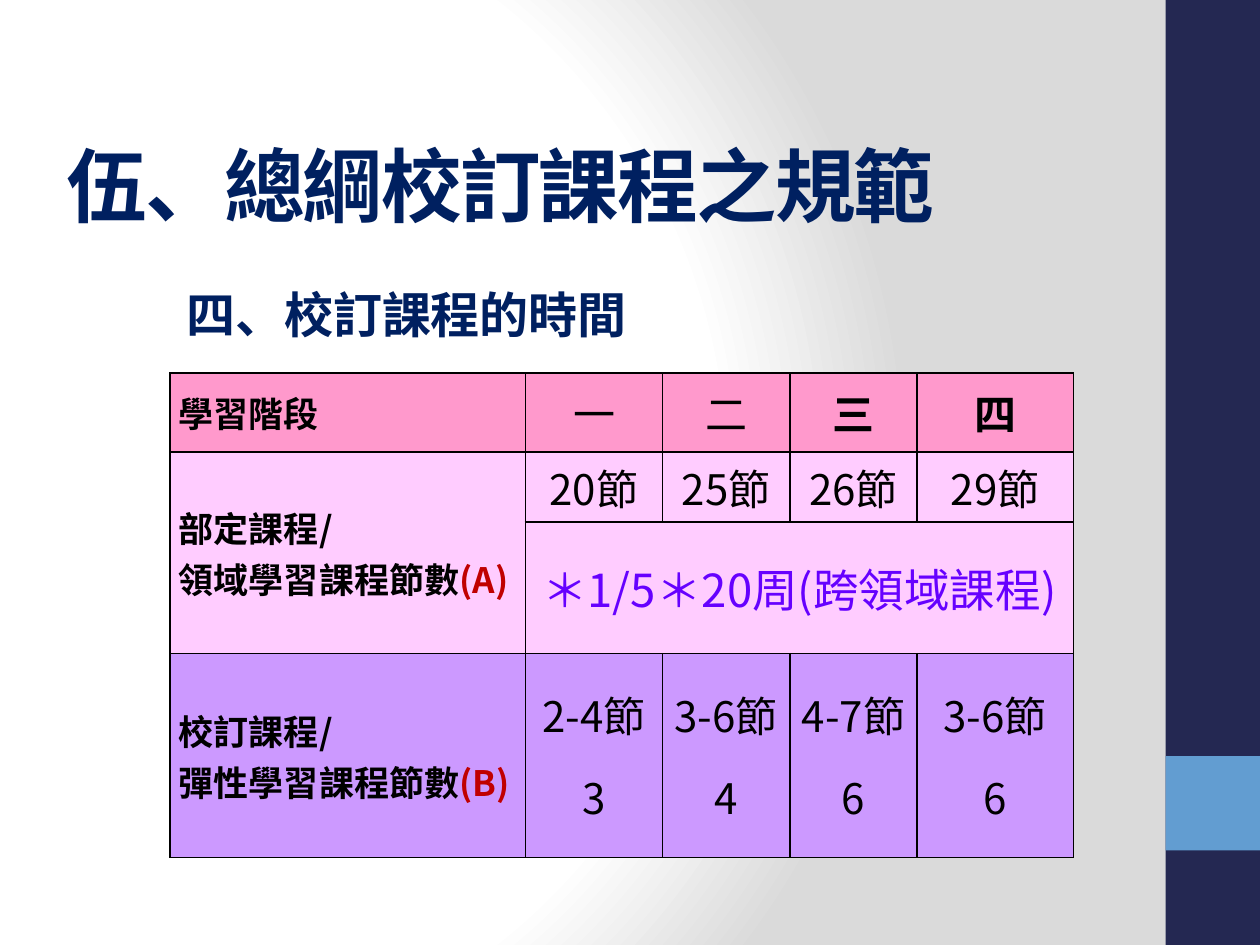
from dataclasses import dataclass

from pptx import Presentation
from pptx.dml.color import RGBColor
from pptx.enum import shapes, text
from pptx.oxml import parse_xml
from pptx.oxml.ns import nsdecls, qn
from pptx.util import Pt


@dataclass(frozen=True)
class Theme:
    face: str = "Noto Sans CJK SC"
    navy: str = "002060"
    dark: str = "242852"
    blue: str = "629DD1"
    black: str = "000000"
    red: str = "C00000"
    violet: str = "6600FF"
    rose: str = "FF99CC"
    pink: str = "FFCCFF"
    lilac: str = "CC99FF"
    white: str = "FFFFFF"
    grey: str = "DADADA"
    title: int = 46
    head: int = 28
    note: int = 26
    cell: int = 24
    label: int = 20


T = Theme()
LEFT, MID = text.PP_ALIGN.LEFT, text.PP_ALIGN.CENTER
COLS = [203, 78.5, 72.7, 72.7, 89.3]
ROWS = [45, 40, 41, 61]
STAGES = ["一", "二", "三", "四"]
HOURS = ["20節", "25節", "26節", "29節"]
FLEX = [("2-4節", "3"), ("3-6節", "4"), ("4-7節", "6"), ("3-6節", "6")]


def rgb(code):
    return RGBColor.from_string(code)


def style(para, size, color, bold=False, align=LEFT, before=0):
    para.alignment = align
    para.space_before = Pt(before)
    font = para.font
    font.size, font.bold, font.name = Pt(size), bold, T.face
    font.color.rgb = rgb(color)
    props = para._p.pPr.find(qn("a:defRPr"))
    props.find(qn("a:latin")).addnext(
        parse_xml(f'<a:ea {nsdecls("a")} typeface="{T.face}"/>'))
    return props


def backdrop(slide):
    stops = "".join(
        f'<a:gs pos="{pos * 1000}"><a:srgbClr val="{color}"/></a:gs>'
        for pos, color in ((0, T.white), (75, T.white), (100, T.grey)))
    fill = slide.background.fill
    fill.solid()
    props = slide._element.cSld.find(qn("p:bg")).find(qn("p:bgPr"))
    props.replace(props.find(qn("a:solidFill")), parse_xml(
        f'<a:gradFill {nsdecls("a")} rotWithShape="1"><a:gsLst>{stops}</a:gsLst>'
        '<a:path path="circle"><a:fillToRect l="20000" t="50000" r="100000" '
        'b="50000"/></a:path></a:gradFill>'))


def sidebar(slide, left, top, width, height):
    """Dark band with a square accent at four fifths of its height."""
    for y, tall, color in ((top, height, T.dark),
                           (top + height * 0.8, width, T.blue)):
        bar = slide.shapes.add_shape(shapes.MSO_SHAPE.RECTANGLE, Pt(left),
                                     Pt(y), Pt(width), Pt(tall))
        bar.shadow.inherit = False
        bar.fill.solid()
        bar.fill.fore_color.rgb = rgb(color)
        bar.line.fill.background()


def heading(slide, left, top, width, height):
    title = slide.shapes.title
    title.left, title.top = Pt(left), Pt(top)
    title.width, title.height = Pt(width), Pt(height)
    frame = title.text_frame
    frame.text = "伍、總綱校訂課程之規範"
    frame.auto_size = text.MSO_AUTO_SIZE.NONE
    frame.vertical_anchor = text.MSO_ANCHOR.MIDDLE
    style(frame.paragraphs[0], T.title, T.navy, True).set("spc", "-100")
    slide.shapes._spTree.append(title._element)


def subhead(slide, left, top, width, height):
    box = slide.shapes.add_textbox(Pt(left), Pt(top), Pt(width), Pt(height))
    frame = box.text_frame
    frame.word_wrap = True
    frame.auto_size = text.MSO_AUTO_SIZE.SHAPE_TO_FIT_TEXT
    frame.text = "四、校訂課程的時間"
    style(frame.paragraphs[0], T.head, T.navy, True)


def dress(cell, color):
    """Set margins, anchor, borders and fill of a cell."""
    cell.margin_left = cell.margin_right = Pt(5)
    cell.margin_top = cell.margin_bottom = 0
    cell.vertical_anchor = text.MSO_ANCHOR.MIDDLE
    cell.fill.solid()
    cell.fill.fore_color.rgb = rgb(color)
    props = cell._tc.get_or_add_tcPr()
    for spot, side in enumerate(("lnL", "lnR", "lnT", "lnB")):
        props.insert(spot, parse_xml(
            f'<a:{side} {nsdecls("a")} w="{Pt(1)}"><a:solidFill>'
            f'<a:srgbClr val="{T.black}"/></a:solidFill></a:{side}>'))


def write(cell, lines, size=T.cell, color=T.black, bold=False, align=MID,
          before=0):
    cell.text = "\n".join(lines)
    for para in cell.text_frame.paragraphs:
        style(para, size, color, bold, align, before)


def label(cell, lines, mark=""):
    write(cell, lines, T.label, bold=True, align=LEFT)
    if mark:
        run = cell.text_frame.paragraphs[-1].add_run()
        run.text = mark
        run.font.color.rgb = rgb(T.red)


def hours(slide, left, top):
    table = slide.shapes.add_table(len(ROWS), len(COLS), Pt(left), Pt(top),
                                   Pt(sum(COLS)), Pt(sum(ROWS))).table
    table.first_row = table.horz_banding = False
    for col, width in zip(table.columns, COLS):
        col.width = Pt(width)
    for row, height, color in zip(table.rows, ROWS,
                                  (T.rose, T.pink, T.pink, T.lilac)):
        row.height = Pt(height)
        for cell in row.cells:
            dress(cell, color)
    at = table.cell
    at(1, 0).merge(at(2, 0))
    at(2, 1).merge(at(2, 4))
    label(at(0, 0), ["學習階段"])
    label(at(1, 0), ["部定課程/", "領域學習課程節數"], "(A)")
    label(at(3, 0), ["校訂課程/", "彈性學習課程節數"], "(B)")
    write(at(2, 1), ["＊1/5＊20周(跨領域課程)"], T.note, T.violet, before=6)
    for col, (stage, count, flex) in enumerate(zip(STAGES, HOURS, FLEX), 1):
        write(at(0, col), [stage], bold=col > 2)
        write(at(1, col), [count])
        write(at(3, col), flex, before=12)


def main():
    deck = Presentation()
    deck.slide_width, deck.slide_height = Pt(720), Pt(540)
    slide = deck.slides.add_slide(deck.slide_layouts[5])
    backdrop(slide)
    sidebar(slide, 666, 0, 54, 540)
    heading(slide, 31, 60.5, 648, 90)
    hours(slide, 97.2, 213.2)
    subhead(slide, 99.4, 159, 332, 41)
    deck.save("out.pptx")


if __name__ == "__main__":
    main()
